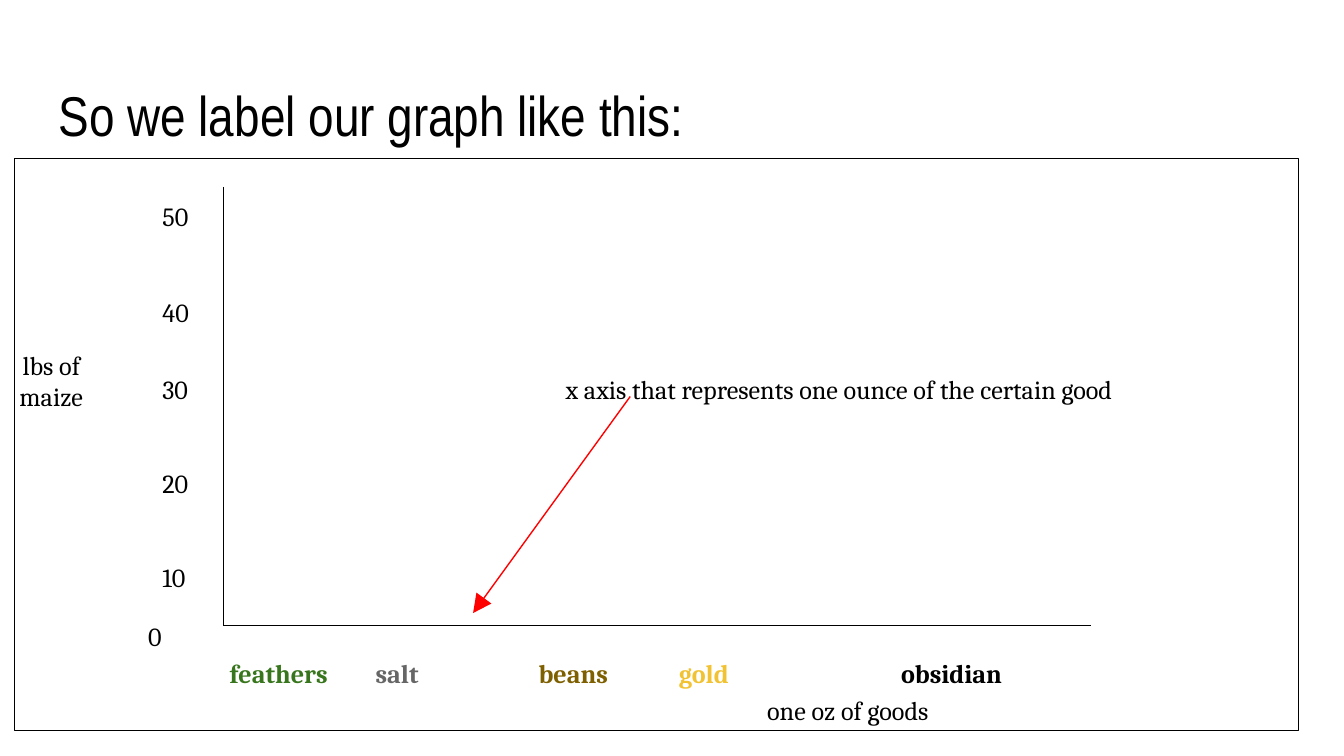
from lxml import etree
from pptx import Presentation
from pptx import util as u
from pptx.dml.color import RGBColor
from pptx.enum import shapes, text
from pptx.oxml import ns

BLACK = RGBColor(0x00, 0x00, 0x00)
RED = RGBColor(0xFF, 0x00, 0x00)
GREEN = RGBColor(0x38, 0x76, 0x1D)
GREY = RGBColor(0x66, 0x66, 0x66)
BROWN = RGBColor(0x7F, 0x60, 0x00)
GOLD = RGBColor(0xF1, 0xC2, 0x32)

TITLE = {"name": "Arial Narrow", "size": u.Pt(30)}
BODY = {"name": "Cambria", "size": u.Pt(14)}
BOLD = {**BODY, "bold": True}


def add_child(parent, tag, **values):
    return etree.SubElement(parent, ns.qn(tag), values)


class GraphPage:
    """Holds the page and its style, and draws each kind of element."""

    inset = u.Cm(0.25)
    line_width = u.Pt(0.75)
    line_height = u.Pt(19)

    def __init__(self, deck):
        self.page = deck.slides.add_slide(deck.slide_layouts[6])

    def span(self, para, words, style, color=BLACK):
        span = para.add_run()
        span.text = words
        for key, value in style.items():
            setattr(span.font, key, value)
        span.font.color.rgb = color

    def frame(self, box, top=inset):
        values = {"word_wrap": True, "vertical_anchor": text.MSO_ANCHOR.TOP,
                  "margin_left": self.inset, "margin_right": self.inset,
                  "margin_top": top, "margin_bottom": self.inset}
        for key, value in values.items():
            setattr(box.text_frame, key, value)
        return box.text_frame

    def label(self, place, words, style, align=text.PP_ALIGN.LEFT):
        box = self.page.shapes.add_textbox(*map(u.Cm, place))
        para = self.frame(box).paragraphs[0]
        para.alignment = align
        self.span(para, words, style)

    def panel(self, place, top, rows):
        """Outlined box; a row is (space before, [(tab stop, words, style, color)])."""
        box = self.page.shapes.add_shape(shapes.MSO_SHAPE.RECTANGLE, *map(u.Cm, place))
        box.shadow.inherit = False
        box.fill.background()
        box.line.color.rgb = BLACK
        box.line.width = self.line_width
        frame = self.frame(box, u.Cm(top))
        for index, (gap, cells) in enumerate(rows):
            para = frame.add_paragraph() if index else frame.paragraphs[0]
            para.alignment = text.PP_ALIGN.LEFT
            para.line_spacing = self.line_height
            para.space_before = u.Pt(gap)
            stops = add_child(para._p.get_or_add_pPr(), "a:tabLst")
            for stop, words, style, color in cells:
                add_child(stops, "a:tab", pos=str(u.Cm(stop)), algn="l")
                self.span(para, "\t" + words, style, color)

    def line(self, start, end, color=BLACK, arrow=False):
        line = self.page.shapes.add_connector(
            shapes.MSO_CONNECTOR.STRAIGHT, *map(u.Cm, start + end))
        line.line.color.rgb = color
        line.line.width = self.line_width
        if arrow:
            add_child(line.line._get_or_add_ln(), "a:tailEnd",
                      type="triangle", w="lg", len="lg")
        add_child(line._element.spPr, "a:effectLst")


def main():
    deck = Presentation()
    deck.slide_width, deck.slide_height = u.Cm(25.4), u.Cm(14.28)
    graph = GraphPage(deck)

    # Title
    graph.label((0.86, 1.27, 23.67, 1.6), "So we label our graph like this:", TITLE)

    # Scale, note and goods
    scale, note = 2.54, 10.16
    goods = [(3.81, "feathers", GREEN), (6.57, "salt", GREY), (9.65, "beans", BROWN),
             (12.3, "gold", GOLD), (16.5, "obsidian", BLACK)]
    rows = [
        (0, [(scale, "50", BODY, BLACK)]),
        (32.4, [(scale, "40", BODY, BLACK)]),
        (22.3, [(scale, "30", BODY, BLACK),
                (note, "x axis that represents one ounce of the certain good", BODY, BLACK)]),
        (31.4, [(scale, "20", BODY, BLACK)]),
        (31.4, [(scale, "10", BODY, BLACK)]),
        (12.6, [(2.27, "0", BODY, BLACK)]),
        (0.8, [(stop, name, BOLD, color) for stop, name, color in goods]),
        (0.3, [(13.97, "one oz of goods", BODY, BLACK)]),
    ]
    graph.panel((0.28, 3, 24.26, 10.8), 0.71, rows)

    # Axes
    origin = (4.22, 11.81)
    graph.line((4.22, 3.53), origin)
    graph.line(origin, (20.62, 11.81))
    graph.label((-0.15, 6.35, 2.24, 1.6), "lbs of maize", BODY, text.PP_ALIGN.CENTER)

    # Arrow from the note to the x axis
    graph.line((11.91, 7.49), (8.94, 11.58), RED, arrow=True)

    deck.save("out.pptx")


if __name__ == "__main__":
    main()
